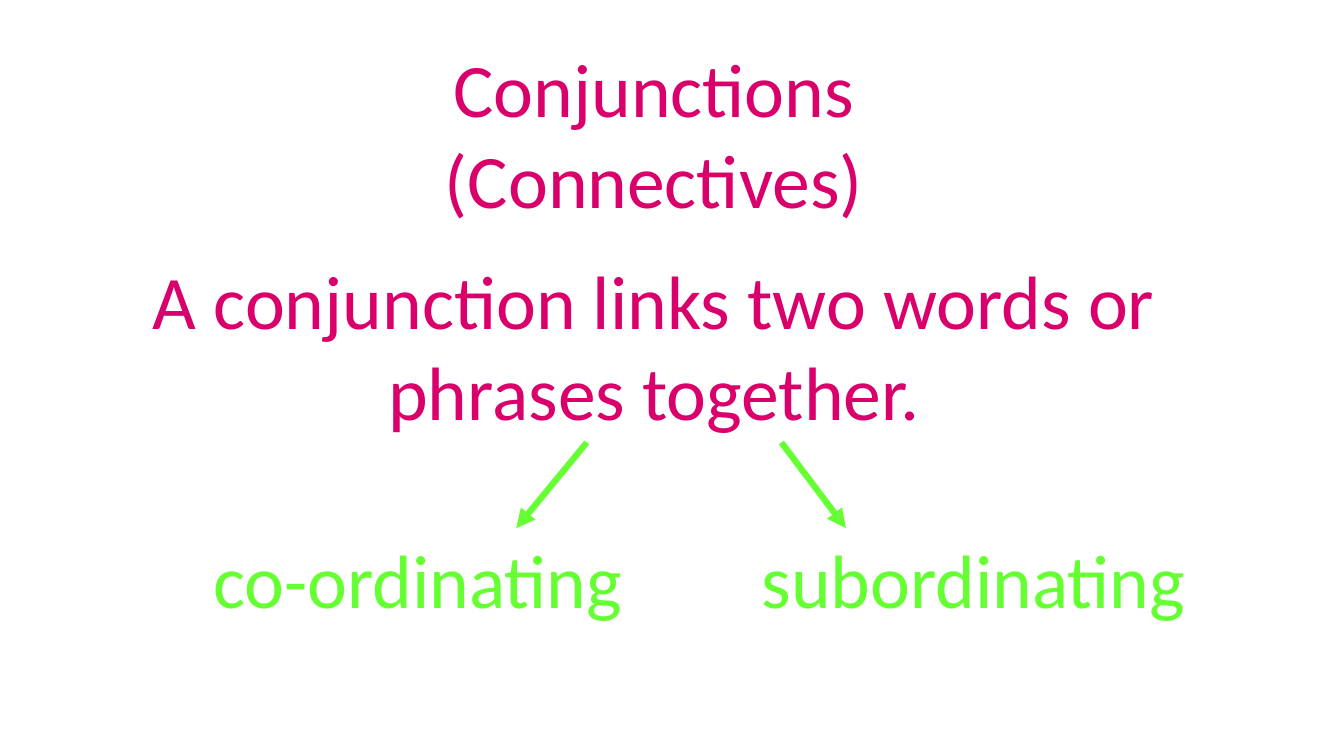
from pptx import Presentation
from pptx.dml.color import RGBColor
from pptx.enum.shapes import MSO_CONNECTOR
from pptx.enum.text import MSO_AUTO_SIZE, PP_ALIGN
from pptx.oxml.ns import qn
from pptx.util import Inches, Pt
from lxml.etree import SubElement

PINK = RGBColor(0xD9, 0x00, 0x6B)
GREEN = RGBColor(0x66, 0xFF, 0x33)

ARROW_TOP, ARROW_BOTTOM = 4.39, 5.24
TEXTS = [
    (["Conjunctions", "(Connectives)"], (4.29, 0.37, 4.39, 1.92), PINK, False),
    (["A conjunction links two words or phrases together."],
     (0.62, 2.47, 11.73, 1.92), PINK, True),
    (["co-ordinating"], (1.63, ARROW_BOTTOM, 5.03, 1.01), GREEN, True),
    (["subordinating"], (7.14, ARROW_BOTTOM, 5.03, 1.01), GREEN, True),
]
ARROWS = [(5.82, 5.12), (7.75, 8.39)]


def add_text(slide, lines, box, color, wrap):
    text_frame = slide.shapes.add_textbox(*map(Inches, box)).text_frame
    text_frame.word_wrap = wrap
    text_frame.auto_size = MSO_AUTO_SIZE.SHAPE_TO_FIT_TEXT
    text_frame.text = "\n".join(lines)
    for paragraph in text_frame.paragraphs:
        paragraph.alignment = PP_ALIGN.CENTER
        paragraph.font.name = "Calibri"
        paragraph.font.size = Pt(54)
        paragraph.font.color.rgb = color


def add_arrow(slide, start, end):
    connector = slide.shapes.add_connector(
        MSO_CONNECTOR.STRAIGHT,
        Inches(start), Inches(ARROW_TOP), Inches(end), Inches(ARROW_BOTTOM))
    connector.line.color.rgb = GREEN
    connector.line.width = Pt(4.5)
    properties = connector._element.spPr
    SubElement(properties.find(qn("a:ln")), qn("a:tailEnd"), type="triangle")
    SubElement(properties, qn("a:effectLst"))


def main():
    presentation = Presentation()
    presentation.slide_width = Inches(13.33)
    presentation.slide_height = Inches(7.5)
    slide = presentation.slides.add_slide(presentation.slide_layouts[6])
    for text in TEXTS:
        add_text(slide, *text)
    for arrow in ARROWS:
        add_arrow(slide, *arrow)
    presentation.save("out.pptx")


if __name__ == "__main__":
    main()
